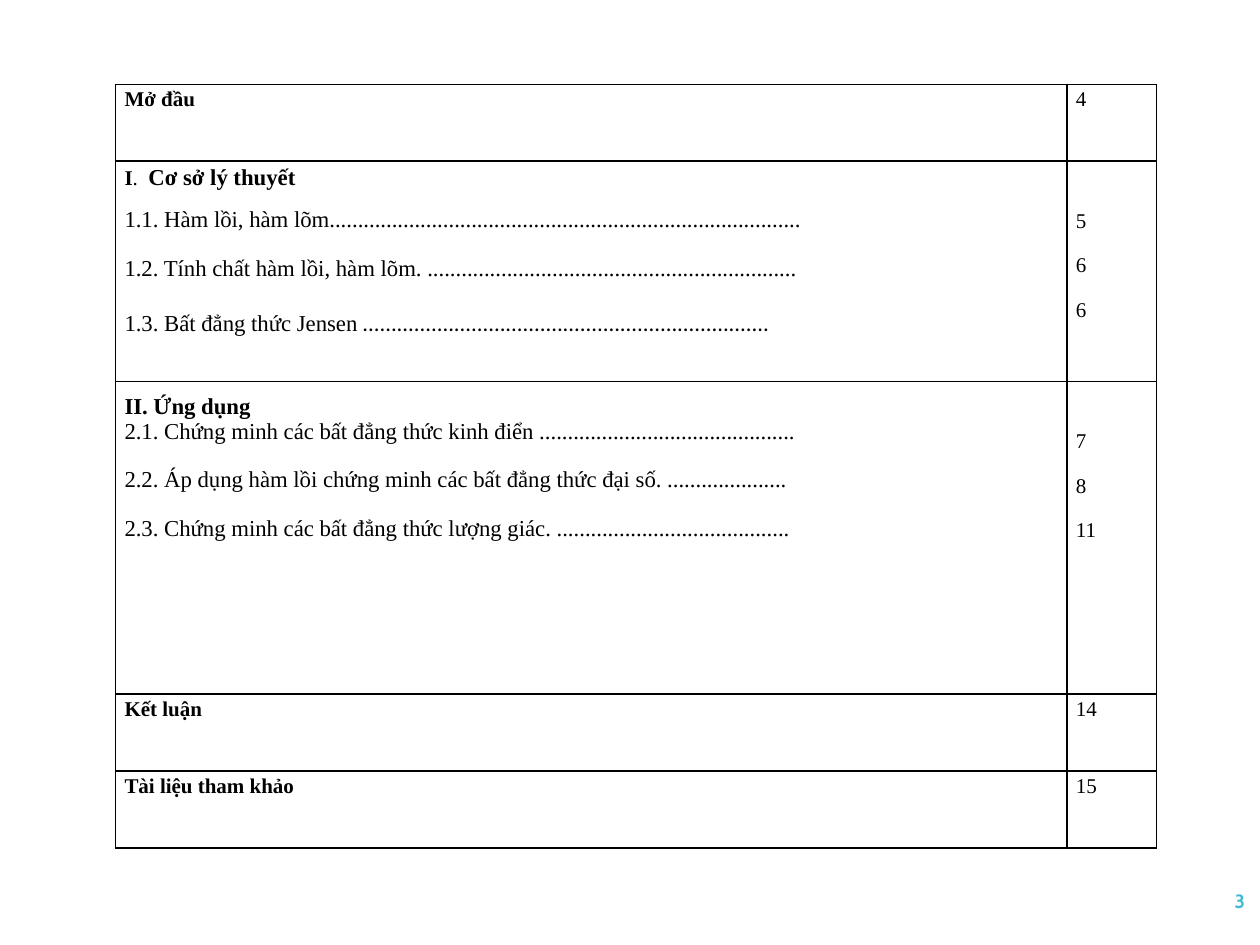
from lxml import etree
from pptx import Presentation
from pptx import util as u
from pptx.dml.color import RGBColor
from pptx.enum import text
from pptx.oxml.ns import qn

BLACK = RGBColor(0x00, 0x00, 0x00)
TEAL = RGBColor(0x40, 0xBA, 0xD2)
SERIF = "Times New Roman"
JUSTIFY = text.PP_ALIGN.JUSTIFY
LEFT = text.PP_ALIGN.LEFT


def add_line(frame, runs, size=12, bold=False, align=JUSTIFY, spacing=1.15, before=0, after=10):
    """Fill the empty first paragraph or append one; a run is (text, font overrides)."""
    line = frame.paragraphs[0]
    if line.runs:
        line = frame.add_paragraph()
    line.alignment, line.line_spacing = align, spacing
    line.space_before, line.space_after = u.Pt(before), u.Pt(after)
    line.font.name, line.font.size, line.font.bold = SERIF, u.Pt(size), bold
    line.font.color.rgb = BLACK
    for words, overrides in runs:
        run = line.add_run()
        run.text = words
        for name, value in overrides.items():
            setattr(run.font, name, value)


def draw_borders(cell):
    properties = cell._tc.get_or_add_tcPr()
    for position, side in enumerate(("lnL", "lnR", "lnT", "lnB")):
        border = etree.Element(qn(f"a:{side}"), w=str(u.Pt(1)))
        fill = etree.SubElement(border, qn("a:solidFill"))
        etree.SubElement(fill, qn("a:srgbClr"), val=str(BLACK))
        properties.insert(position, border)


# Line formats: (size, bold, alignment, line spacing, space before, space after)
CHAPTER = (12, True, JUSTIFY, 1.15, 0, 10)
PART = (13, True, LEFT, 1.5, 0, 0)
FIRST = (13, False, LEFT, 1, 0, 0)
NEXT = (13, False, LEFT, 1, 13.6, 0)
LAST = (13, False, JUSTIFY, 1.15, 14, 10)

# Each row: height in cm, content lines, page numbers, top margin of the page cell in cm
contents = [
    (1.55, [([("Mở đầu", {})], CHAPTER)], ["4"], 0),
    (4.44, [
        ([("I", {}), (".  ", {"bold": False}), ("Cơ sở lý thuyết", {"size": u.Pt(13)})], CHAPTER),
        ([("1.1. Hàm lồi, hàm lõm" + "." * 83, {})], FIRST),
        ([("1.2. Tính chất hàm lồi, hàm lõm. " + "." * 65, {})], NEXT),
        ([("1.3. Bất đẳng thức Jensen", {}), (" " + "." * 71, {"name": "Calibri"})], LAST),
    ], ["5", "6", "6"], 0.91),
    (6.3, [
        ([("II. Ứng dụng", {})], PART),
        ([("2.1. Chứng minh các bất đẳng thức kinh điển " + "." * 45, {})], FIRST),
        ([("2.2. Áp dụng hàm lồi chứng minh các bất đẳng thức đại số. " + "." * 21, {})], NEXT),
        ([("2.3. Chứng minh các bất đẳng thức lượng giác. " + "." * 41, {})], NEXT),
    ], ["7", "8", "11"], 0.91),
    (1.55, [([("Kết luận", {})], CHAPTER)], ["14"], 0),
    (1.55, [([("Tài liệu tham khảo", {})], CHAPTER)], ["15"], 0),
]

deck = Presentation()
deck.slide_width, deck.slide_height = u.Cm(25.4), u.Cm(19.05)
slide = deck.slides.add_slide(deck.slide_layouts[6])

height = sum(row[0] for row in contents)
toc = slide.shapes.add_table(len(contents), 2, u.Cm(2.33), u.Cm(1.7), u.Cm(20.98), u.Cm(height)).table
toc.first_row = toc.horz_banding = False
toc.columns[0].width, toc.columns[1].width = u.Cm(19.18), u.Cm(1.8)

for index, (row_height, lines, pages, page_top) in enumerate(contents):
    toc.rows[index].height = u.Cm(row_height)
    entry, page = toc.cell(index, 0), toc.cell(index, 1)
    for cell in (entry, page):
        cell.margin_left = cell.margin_right = u.Cm(0.18)
        cell.margin_top = cell.margin_bottom = 0
        cell.fill.background()
        draw_borders(cell)
    page.margin_top = u.Cm(page_top)
    for runs, line_format in lines:
        add_line(entry.text_frame, runs, *line_format)
    for number in pages:
        add_line(page.text_frame, [(number, {})])

slide_number = slide.shapes.add_textbox(u.Cm(22.15), u.Cm(17.65), u.Cm(3.2), u.Cm(1.02)).text_frame
slide_number.word_wrap = True
slide_number.vertical_anchor = text.MSO_ANCHOR.MIDDLE
footer = slide_number.paragraphs[0]
footer.text = "3"
footer.alignment = text.PP_ALIGN.RIGHT
footer.font.name, footer.font.size, footer.font.bold = "Cabin", u.Pt(11), True
footer.font.color.rgb = TEAL

deck.save("out.pptx")
